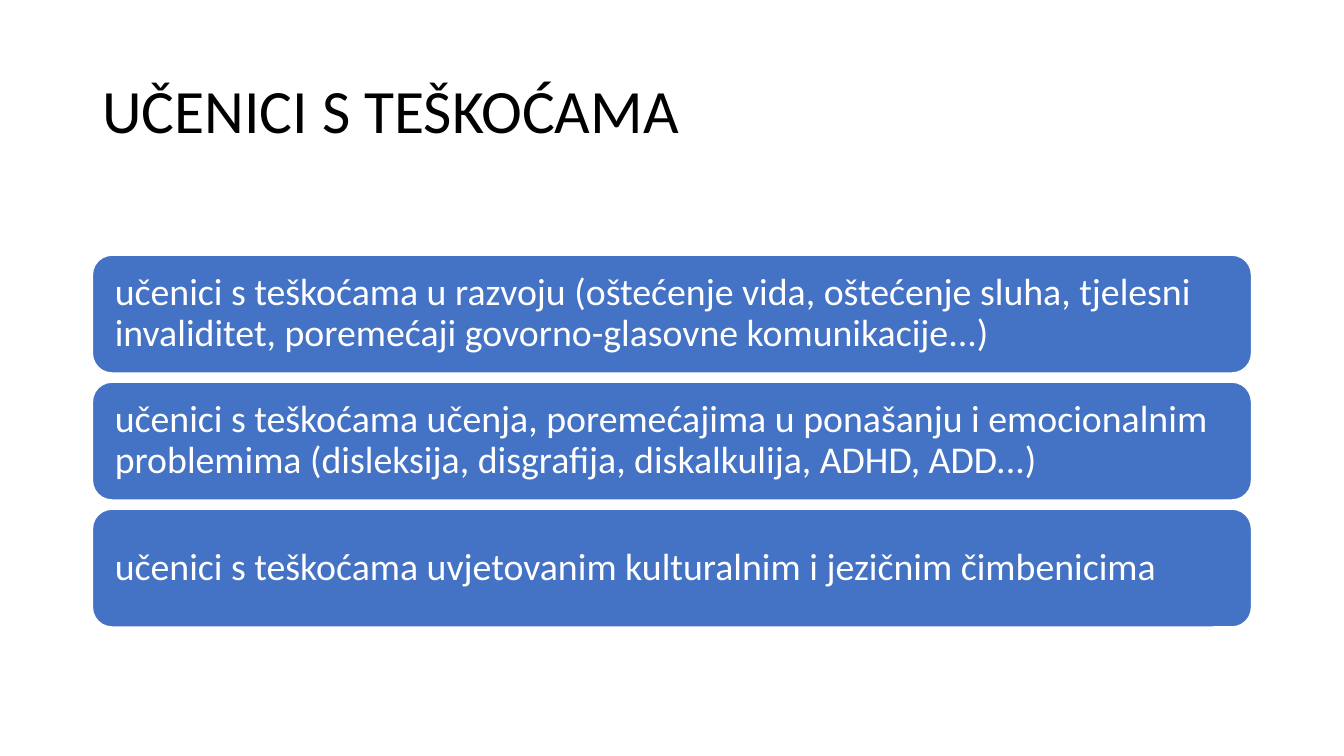
import pptx
import pptx.dml.color
import pptx.enum.shapes
import pptx.enum.text
import pptx.util

Cm = pptx.util.Cm
BLACK = pptx.dml.color.RGBColor(0x00, 0x00, 0x00)
WHITE = pptx.dml.color.RGBColor(0xFF, 0xFF, 0xFF)
BLUE = pptx.dml.color.RGBColor(0x44, 0x72, 0xC4)

LEFT, WIDTH = 2.33, 29.21
FIRST_TOP, BAR_HEIGHT, BAR_STEP = 6.43, 2.97, 3.2

GROUPS = [
    "učenici s teškoćama u razvoju (oštećenje vida, oštećenje sluha, tjelesni "
    "invaliditet, poremećaji govorno-glasovne komunikacije...)",
    "učenici s teškoćama učenja, poremećajima u ponašanju i emocionalnim "
    "problemima (disleksija, disgrafija, diskalkulija, ADHD, ADD...)",
    "učenici s teškoćama uvjetovanim kulturalnim i jezičnim čimbenicima",
]


def apply_format(target, values):
    for name, value in values.items():
        setattr(target, name, value)


class SlideBuilder:
    font = "Calibri"

    def __init__(self, page):
        self.page = page

    def fill_text(self, box, text, size, color, margin):
        frame = box.text_frame
        apply_format(frame, {
            "word_wrap": True,
            "auto_size": pptx.enum.text.MSO_AUTO_SIZE.NONE,
            "vertical_anchor": pptx.enum.text.MSO_ANCHOR.MIDDLE,
            "margin_left": Cm(margin),
            "margin_right": Cm(margin),
        })
        para = frame.paragraphs[0]
        apply_format(para, {
            "alignment": pptx.enum.text.PP_ALIGN.LEFT,
            "line_spacing": 0.9,
        })
        span = para.add_run()
        span.text = text
        apply_format(span.font, {"name": self.font, "size": pptx.util.Pt(size)})
        span.font.color.rgb = color

    def title(self, text):
        box = self.page.shapes.title
        apply_format(box, {
            "left": Cm(LEFT), "top": Cm(1.01),
            "width": Cm(WIDTH), "height": Cm(3.68),
        })
        self.fill_text(box, text, 44, BLACK, 0.25)

    def bar(self, text, top):
        box = self.page.shapes.add_shape(
            pptx.enum.shapes.MSO_SHAPE.ROUNDED_RECTANGLE,
            Cm(LEFT), Cm(top), Cm(WIDTH), Cm(BAR_HEIGHT))
        box.shadow.inherit = False
        box.fill.solid()
        box.fill.fore_color.rgb = BLUE
        box.line.color.rgb = WHITE
        box.line.width = pptx.util.Pt(1)
        self.fill_text(box, text, 27, WHITE, 0.42)


def main():
    deck = pptx.Presentation()
    apply_format(deck, {"slide_width": Cm(33.87), "slide_height": Cm(19.05)})
    title_only = deck.slide_layouts.get_by_name("Title Only")
    builder = SlideBuilder(deck.slides.add_slide(title_only))
    builder.title("UČENICI S TEŠKOĆAMA")
    for row, text in enumerate(GROUPS):
        builder.bar(text, FIRST_TOP + row * BAR_STEP)
    deck.save("out.pptx")


if __name__ == "__main__":
    main()
